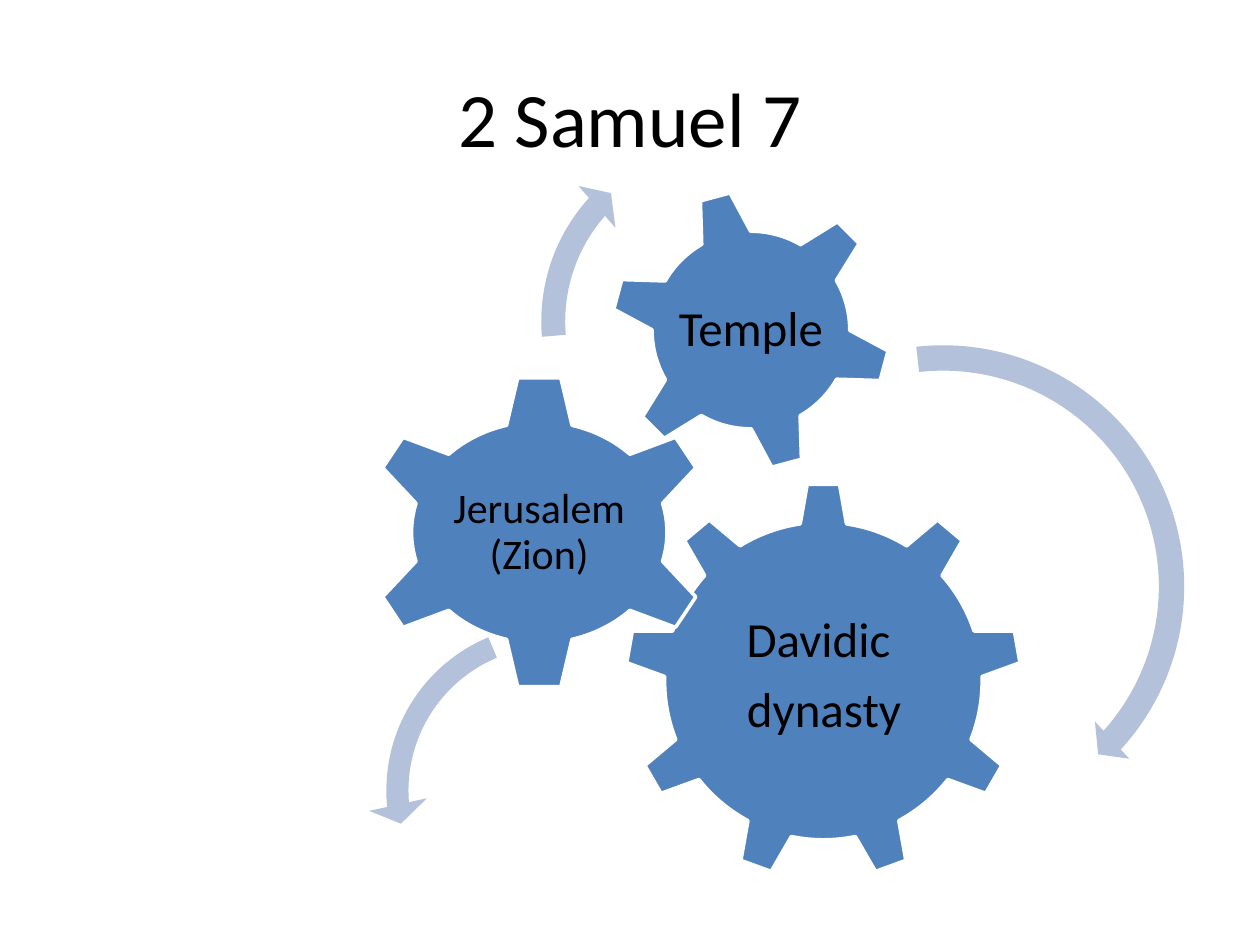
from dataclasses import dataclass

from pptx import Presentation
from pptx.dml.color import RGBColor
from pptx.enum import shapes, text
from pptx.util import Inches, Pt

SHAPE = shapes.MSO_SHAPE


@dataclass(frozen=True)
class Theme:
    """Hold the colours, font and type sizes of the slide."""
    font: str = "Calibri"
    ink: RGBColor = RGBColor(0, 0, 0)
    gear: RGBColor = RGBColor(0x4F, 0x81, 0xBD)
    edge: RGBColor = RGBColor(0xFF, 0xFF, 0xFF)
    arrow: RGBColor = RGBColor(0xB3, 0xC1, 0xDB)
    title: int = 44
    large: int = 28
    medium: int = 24


THEME = Theme()

GEARS = [
    (SHAPE.GEAR_9, (4.96, 3.83, 3.15, 3.15), 0,
     (5.6, 4.56, 1.88, 1.62), ["Davidic ", "dynasty"], THEME.large, 0.04),
    (SHAPE.GEAR_6, (2.89, 2.97, 2.78, 2.51), 0,
     (3.56, 3.61, 1.44, 1.24), ["Jerusalem (Zion)"], THEME.medium, 0.03),
    (SHAPE.GEAR_6, (4.84, 1.5, 2.24, 2.24), 345,
     (5.33, 1.99, 1.26, 1.26), ["Temple"], THEME.large, 0.04),
]

ARROWS = [
    (SHAPE.CIRCULAR_ARROW, (5.47, 2.64, 4.03, 4.03),
     (0.05, 2.99, 25.36, 158.18, 0.05)),
    (SHAPE.LEFT_CIRCULAR_ARROW, (2.92, 4.81, 2.93, 2.93),
     (0.06, 4.3, 104.89, 148.38, 0.08)),
    (SHAPE.CIRCULAR_ARROW, (4.17, 0.97, 3.16, 3.16),
     (0.06, 3.94, 133.14, 105.08, 0.07)),
]


def apply(target, formats):
    """Set each named attribute of the target."""
    for name, value in formats.items():
        setattr(target, name, value)


def inches(box):
    """Turn a box of plain numbers into lengths."""
    return [Inches(value) for value in box]


def write(frame, lines, size, margin):
    """Fill a text frame with centred paragraphs."""
    sides = ("left", "top", "right", "bottom")
    apply(frame, {f"margin_{side}": Inches(margin) for side in sides})
    apply(frame, {"word_wrap": True,
                  "vertical_anchor": text.MSO_ANCHOR.MIDDLE})
    for index, line in enumerate(lines):
        para = frame.add_paragraph() if index else frame.paragraphs[0]
        apply(para, {"alignment": text.PP_ALIGN.CENTER, "line_spacing": 0.9,
                     "space_after": Pt(0.35 * size)})
        span = para.add_run()
        span.text = line
        apply(span.font, {"name": THEME.font, "size": Pt(size)})
        span.font.color.rgb = THEME.ink


def add_title(page, box, words):
    """Place the slide title in its placeholder."""
    title = page.shapes.title
    names = ("left", "top", "width", "height")
    apply(title, dict(zip(names, inches(box))))
    title.text_frame.text = words
    para = title.text_frame.paragraphs[0]
    para.alignment = text.PP_ALIGN.CENTER
    apply(para.font, {"name": THEME.font, "size": Pt(THEME.title)})
    para.font.color.rgb = THEME.ink


def add_gear(page, kind, box, turn, label_box, lines, size, margin):
    """Draw one gear with its upright label."""
    gear = page.shapes.add_shape(kind, *inches(box))
    gear.rotation = turn
    gear.shadow.inherit = False
    gear.fill.solid()
    gear.fill.fore_color.rgb = THEME.gear
    gear.line.color.rgb = THEME.edge
    gear.line.width = Pt(2)
    label = page.shapes.add_textbox(*inches(label_box))
    write(label.text_frame, lines, size, margin)


def add_turn_arrow(page, kind, box, angles):
    """Draw one curved arrow showing a direction of turning."""
    arrow = page.shapes.add_shape(kind, *inches(box))
    arrow.shadow.inherit = False
    arrow.fill.solid()
    arrow.fill.fore_color.rgb = THEME.arrow
    arrow.line.fill.background()
    for index, value in enumerate(angles):
        arrow.adjustments[index] = value


def main():
    """Build the slide and save it."""
    deck = Presentation()
    apply(deck, {"slide_width": Inches(10), "slide_height": Inches(7.5)})
    page = deck.slides.add_slide(deck.slide_layouts.get_by_name("Title Only"))
    add_title(page, (0.5, 0.3, 9, 1.25), "2 Samuel 7")
    for gear in GEARS:
        add_gear(page, *gear)
    for arrow in ARROWS:
        add_turn_arrow(page, *arrow)
    deck.save("out.pptx")


if __name__ == "__main__":
    main()
